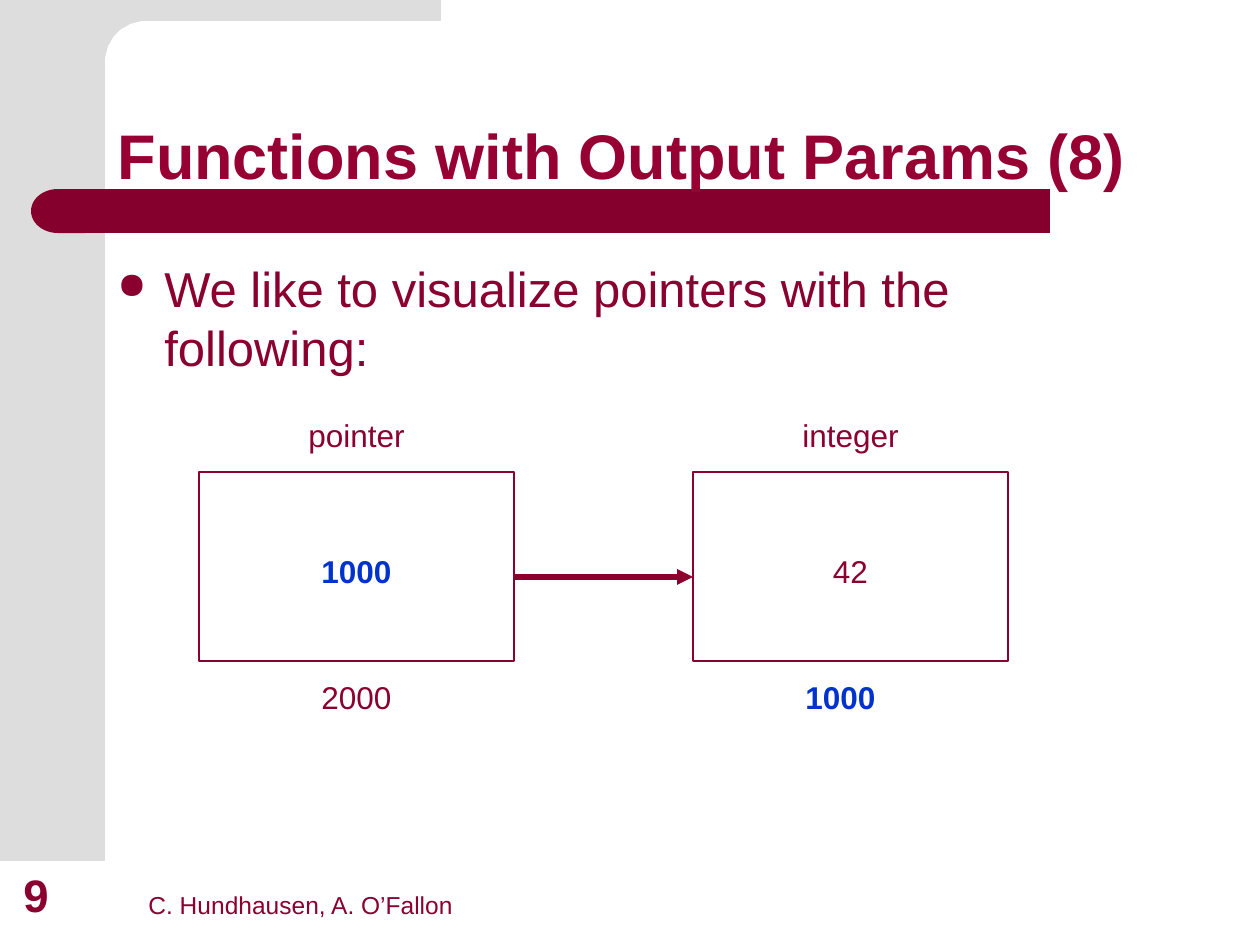
from math import cos, pi, sin

from lxml.etree import SubElement
from pptx import Presentation
from pptx.dml.color import RGBColor
from pptx.enum.shapes import MSO_CONNECTOR, MSO_SHAPE
from pptx.enum.text import MSO_ANCHOR, MSO_AUTO_SIZE, PP_ALIGN
from pptx.oxml.ns import qn
from pptx.util import Emu, Pt

SCALE = 914400 / 126  # EMU in one px
COLORS = {
    "panel": "DDDDDD",
    "bar": "86002D",
    "title": "960032",
    "text": "8A002E",
    "address": "0033CC",
}


def px(length):
    return Emu(round(length * SCALE))


def color(name):
    return RGBColor.from_string(COLORS[name])


def paint(shape, fill=None, line=None):
    shape.shadow.inherit = False
    if fill:
        shape.fill.solid()
        shape.fill.fore_color.rgb = color(fill)
    else:
        shape.fill.background()
    if line:
        shape.line.color.rgb = color(line)
        shape.line.width = Pt(0.75)
    else:
        shape.line.fill.background()


def add_block(page, kind, area, **look):
    shape = page.shapes.add_shape(kind, *map(px, area))
    paint(shape, **look)
    return shape


def add_corner(page):
    """Top strip whose lower left inner corner is a quarter circle."""
    radius, steps = 41, 16
    angles = [pi / 2 * step / steps for step in range(steps + 1)]
    arc = [(146 - radius * sin(a), 62 - radius * cos(a)) for a in angles]
    builder = page.shapes.build_freeform(441, 0, scale=SCALE)
    builder.add_line_segments([(441, 21), *arc, (63, 62), (63, 0)], close=True)
    paint(builder.convert_to_shape(), fill="panel")


def write(box, text, size, ink="text", bold=False, align=PP_ALIGN.LEFT,
          anchor=MSO_ANCHOR.TOP, fit=MSO_AUTO_SIZE.NONE):
    frame = box.text_frame
    frame_format = {"word_wrap": True, "vertical_anchor": anchor, "auto_size": fit}
    for name, value in frame_format.items():
        setattr(frame, name, value)
    para = frame.paragraphs[0]
    para.alignment = align
    span = para.add_run()
    span.text = text
    font_format = {"name": "Arial", "size": Pt(size), "bold": bold}
    for name, value in font_format.items():
        setattr(span.font, name, value)
    span.font.color.rgb = color(ink)
    return para


def add_text(page, area, text, size, **look):
    box = page.shapes.add_textbox(*map(px, area))
    return write(box, text, size, **look)


def add_title(page, area, text):
    title = page.shapes.title
    title.left, title.top, title.width, title.height = map(px, area)
    para = write(title, text, 36, ink="title", bold=True, anchor=MSO_ANCHOR.BOTTOM)
    para.line_spacing = 0.9
    # Bring the title in front of the bar
    title.element.getparent().append(title.element)


def add_bullet(para, indent):
    properties = para._p.get_or_add_pPr()
    properties.set("marL", str(px(indent)))
    properties.set("indent", str(-px(indent)))
    bullet_color = SubElement(properties, qn("a:buClr"))
    SubElement(bullet_color, qn("a:srgbClr"), val=COLORS["text"])
    SubElement(properties, qn("a:buSzPct"), val="75000")
    SubElement(properties, qn("a:buChar"), char="●")


def add_variable(page, left, kind, value, address, address_left, pointer=False):
    """Memory cell with its type above and its address below."""
    add_block(page, MSO_SHAPE.RECTANGLE, (left, 472, 315, 189), line="text")
    marked = {"ink": "address", "bold": True}
    labels = [
        (left + 63, 546, value, marked if pointer else {}),
        (left + 63, 410, kind, {}),
        (address_left, 672, address, {} if pointer else marked),
    ]
    for label_left, top, text, look in labels:
        add_text(page, (label_left, top, 189, 50), text, 18, align=PP_ALIGN.CENTER,
                 fit=MSO_AUTO_SIZE.SHAPE_TO_FIT_TEXT, **look)


def add_arrow(page, start, end, y):
    arrow = page.shapes.add_connector(
        MSO_CONNECTOR.STRAIGHT, px(start), px(y), px(end), px(y))
    arrow.line.color.rgb = color("text")
    arrow.line.width = Pt(3)
    SubElement(arrow.line._get_or_add_ln(), qn("a:tailEnd"), type="triangle")
    SubElement(arrow.element.spPr, qn("a:effectLst"))


def main():
    deck = Presentation()
    deck.slide_width, deck.slide_height = px(1260), px(945)
    page = deck.slides.add_slide(deck.slide_layouts[5])

    # Frame
    add_block(page, MSO_SHAPE.RECTANGLE, (0, 0, 105, 861), fill="panel")
    add_corner(page)
    add_block(page, MSO_SHAPE.RECTANGLE, (84, 189, 966, 44), fill="bar")
    cap = add_block(page, MSO_SHAPE.FLOWCHART_DELAY, (31, 189, 54, 44), fill="bar")
    cap.element.spPr.xfrm.set("flipH", "1")

    # Footer
    add_text(page, (136, 861, 473, 65), "C. Hundhausen, A. O’Fallon", 14,
             anchor=MSO_ANCHOR.BOTTOM)
    add_text(page, (11, 861, 81, 67), "9", 26, bold=True, anchor=MSO_ANCHOR.BOTTOM)

    # Title and body
    add_title(page, (105, 42, 1092, 157), "Functions with Output Params (8)")
    body = add_text(page, (105, 252, 1060, 513),
                    "We like to visualize pointers with the following:", 28)
    add_bullet(body, 47)

    # Pointer diagram
    add_variable(page, 199, "pointer", "1000", "2000", 262, pointer=True)
    add_variable(page, 693, "integer", "42", "1000", 746)
    add_arrow(page, 514, 693, 577)

    deck.save("out.pptx")


if __name__ == "__main__":
    main()
